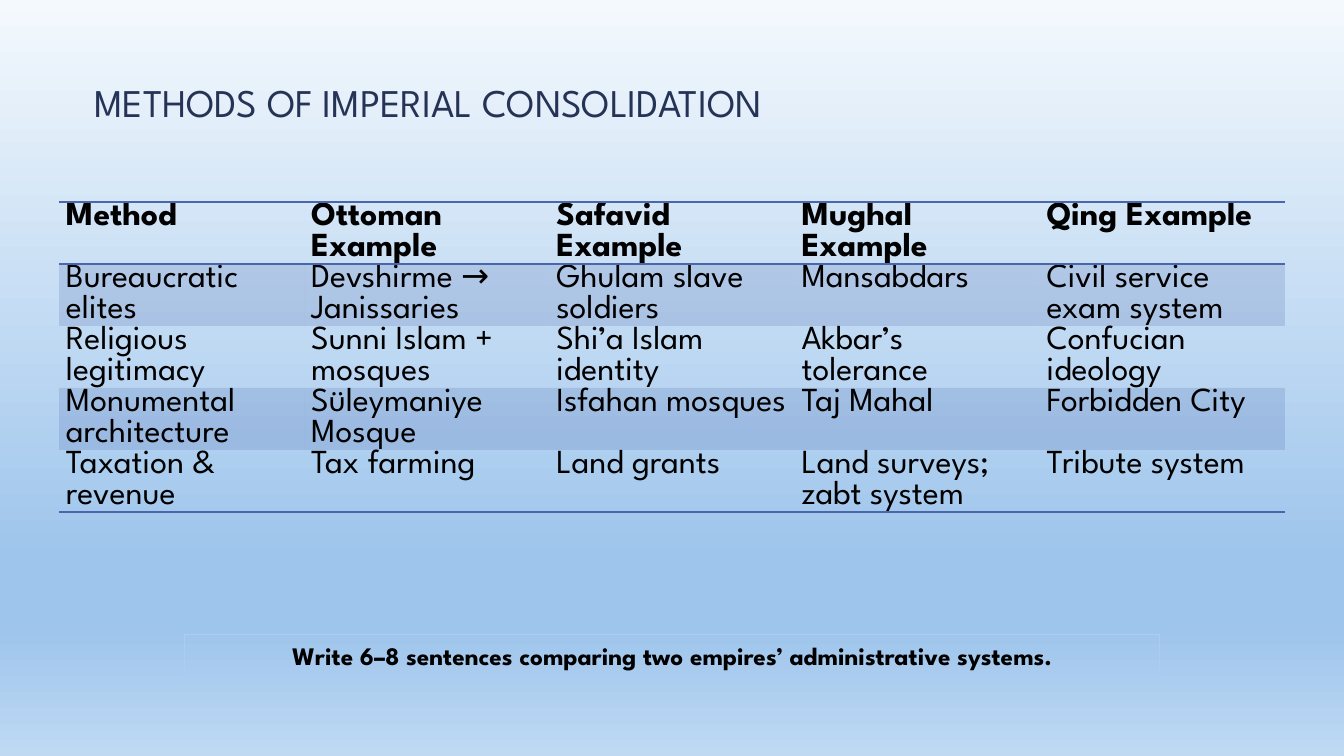
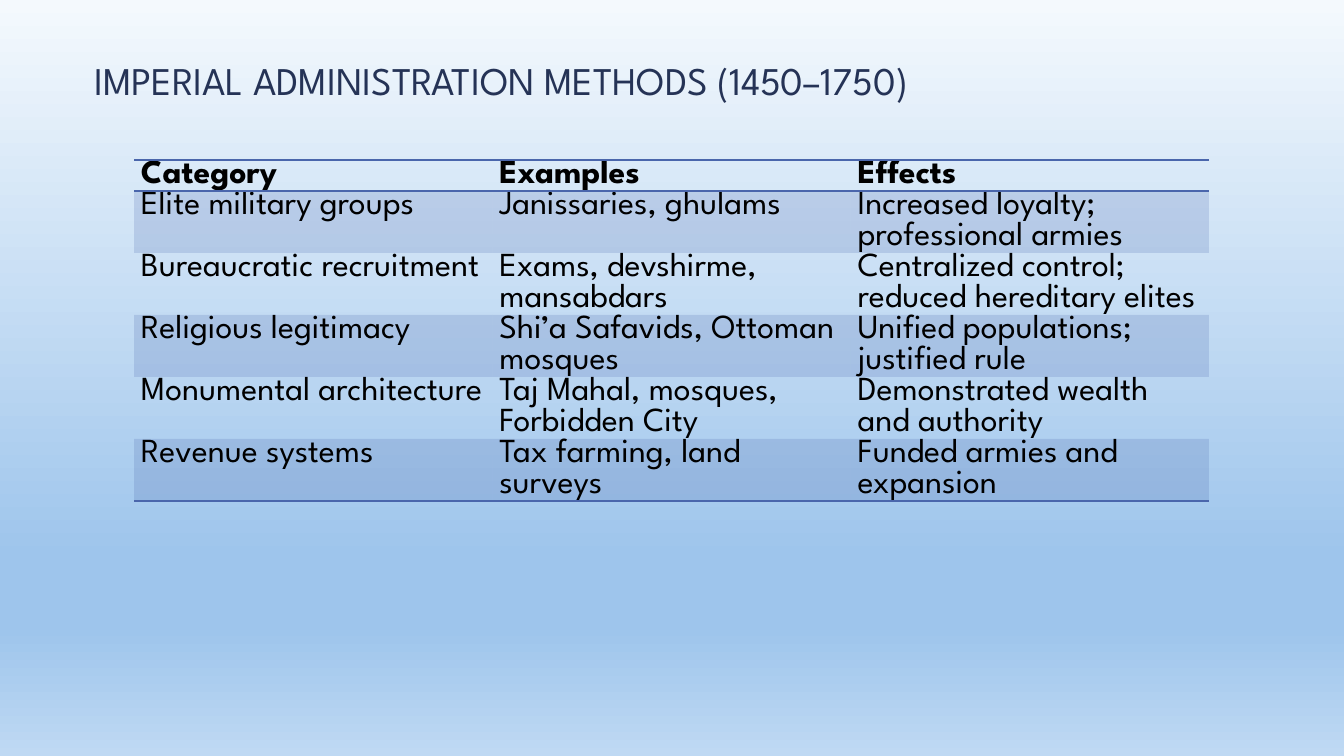
from lxml import etree
from pptx import Presentation
from pptx.dml.color import RGBColor
from pptx.enum.shapes import MSO_SHAPE
from pptx.enum.text import MSO_ANCHOR, MSO_AUTO_SIZE, PP_ALIGN
from pptx.oxml.ns import qn
from pptx.util import Emu, Pt

RECTANGLE = MSO_SHAPE.RECTANGLE
MIDDLE, BOTTOM = MSO_ANCHOR.MIDDLE, MSO_ANCHOR.BOTTOM
NO_AUTOFIT = MSO_AUTO_SIZE.NONE
LEFT, CENTER = PP_ALIGN.LEFT, PP_ALIGN.CENTER

# Shared style
WIDTH, HEIGHT = 1344, 756
EMU_PER_PX = 12192000 / WIDTH
FONT = "League Spartan"
TITLE_COLOR, TEXT_COLOR = "253356", "000000"
ACCENT, PROMPT_BORDER = "4A66AC", "ACCBF9"
BAND_OPACITY = 20
BACKDROP = [(0, "F4F9FD"), (74, "9EC5EC"), (83, "9EC5EC"), (100, "BFD9F3")]
LINE_HEIGHT = 31
NO_STYLE_NO_GRID = "{2D5ABB26-0587-4C30-8999-92F81FD0307C}"

# Content
CONSOLIDATION = [
    ["Method", "Ottoman Example", "Safavid Example", "Mughal Example", "Qing Example"],
    ["Bureaucratic elites", "Devshirme → Janissaries", "Ghulam slave soldiers",
     "Mansabdars", "Civil service exam system"],
    ["Religious legitimacy", "Sunni Islam + mosques", "Shi’a Islam identity",
     "Akbar’s tolerance", "Confucian ideology"],
    ["Monumental architecture", "Süleymaniye Mosque", "Isfahan mosques",
     "Taj Mahal", "Forbidden City"],
    ["Taxation & revenue", "Tax farming", "Land grants",
     "Land surveys; zabt system", "Tribute system"],
]
ADMINISTRATION = [
    ["Category", "Examples", "Effects"],
    ["Elite military groups", "Janissaries, ghulams",
     "Increased loyalty; professional armies"],
    ["Bureaucratic recruitment", "Exams, devshirme, mansabdars",
     "Centralized control; reduced hereditary elites"],
    ["Religious legitimacy", "Shi’a Safavids, Ottoman mosques",
     "Unified populations; justified rule"],
    ["Monumental architecture", "Taj Mahal, mosques, Forbidden City",
     "Demonstrated wealth and authority"],
    ["Revenue systems", "Tax farming, land surveys", "Funded armies and expansion"],
]


def px(length):
    return Emu(round(length * EMU_PER_PX))


def color(hex_code):
    return RGBColor.from_string(hex_code)


class Deck:
    def __init__(self):
        self.prs = Presentation()
        self.prs.slide_width, self.prs.slide_height = px(WIDTH), px(HEIGHT)
        self.slide = None
        self.paint_backdrop()

    def paint_backdrop(self):
        master = self.prs.slide_master
        fill = master.background.fill
        fill.gradient()
        fill.gradient_angle = 270
        stops = master.element.xpath("./p:cSld/p:bg//a:gsLst")[0]
        for stop in list(stops):
            stops.remove(stop)
        for percent, hex_code in BACKDROP:
            stop = etree.SubElement(stops, qn("a:gs"), pos=str(percent * 1000))
            etree.SubElement(stop, qn("a:srgbClr"), val=hex_code)

    def set_text(self, frame, text, size, hex_code=TEXT_COLOR, bold=False, align=LEFT):
        frame.text = text
        paragraph = frame.paragraphs[0]
        paragraph.alignment = align
        font = paragraph.runs[0].font
        font.name, font.size, font.bold = FONT, Pt(size), bold
        font.color.rgb = color(hex_code)
        return paragraph

    def add_slide(self, title, top):
        self.slide = self.prs.slides.add_slide(self.prs.slide_layouts[5])
        heading = self.slide.shapes.title
        heading.left, heading.top = px(84), px(top)
        heading.width, heading.height = px(1176), px(67)
        frame = heading.text_frame
        frame.auto_size, frame.vertical_anchor = NO_AUTOFIT, BOTTOM
        self.set_text(frame, title, 28, TITLE_COLOR).line_spacing = 0.9

    def rule(self, cell, side):
        properties = cell._tc.get_or_add_tcPr()
        line = etree.Element(qn(f"a:{side}"), w=str(Pt(1)))
        fill = etree.SubElement(line, qn("a:solidFill"))
        etree.SubElement(fill, qn("a:srgbClr"), val=ACCENT)
        properties.insert(0, line)

    def shade(self, cell):
        cell.fill.solid()
        cell.fill.fore_color.rgb = color(ACCENT)
        tint = cell._tc.tcPr.find(".//" + qn("a:srgbClr"))
        etree.SubElement(tint, qn("a:alpha"), val=str(BAND_OPACITY * 1000))

    def add_table(self, rows, left, top, width, header_lines):
        heights = [header_lines * LINE_HEIGHT] + [2 * LINE_HEIGHT] * (len(rows) - 1)
        table = self.slide.shapes.add_table(
            len(rows), len(rows[0]), px(left), px(top), px(width), px(sum(heights))).table
        table.horz_banding = False
        table._tbl.tblPr.find(qn("a:tableStyleId")).text = NO_STYLE_NO_GRID
        for r, texts in enumerate(rows):
            table.rows[r].height = px(heights[r])
            for c, text in enumerate(texts):
                self.fill_cell(table.cell(r, c), text, r, len(rows) - 1)

    def fill_cell(self, cell, text, row, last_row):
        cell.margin_left = cell.margin_right = px(7)
        cell.margin_top = cell.margin_bottom = 0
        self.set_text(cell.text_frame, text, 24, bold=row == 0)
        if row % 2:
            self.shade(cell)
        else:
            cell.fill.background()
        # Each rule goes in front, so the bottom one comes first
        if row in (0, last_row):
            self.rule(cell, "lnB")
        if row == 0:
            self.rule(cell, "lnT")

    def add_prompt(self, text, left, top, width, height):
        prompt = self.slide.shapes.add_shape(
            RECTANGLE, px(left), px(top), px(width), px(height))
        prompt.shadow.inherit = False
        prompt.fill.background()
        prompt.line.color.rgb = color(PROMPT_BORDER)
        prompt.line.width = Pt(0.75)
        prompt.text_frame.vertical_anchor = MIDDLE
        self.set_text(prompt.text_frame, text, 18, bold=True, align=CENTER)


def main():
    deck = Deck()

    # Consolidation by empire
    deck.add_slide("METHODS OF IMPERIAL CONSOLIDATION", 64)
    deck.add_table(CONSOLIDATION, 59, 202, 1226, header_lines=2)
    deck.add_prompt("Write 6–8 sentences comparing two empires’ administrative systems.",
                    185, 635, 975, 40)

    # Administration by category
    deck.add_slide("IMPERIAL ADMINISTRATION METHODS (1450–1750)", 42)
    deck.add_table(ADMINISTRATION, 134, 160, 1075, header_lines=1)

    deck.prs.save("out.pptx")


if __name__ == "__main__":
    main()
